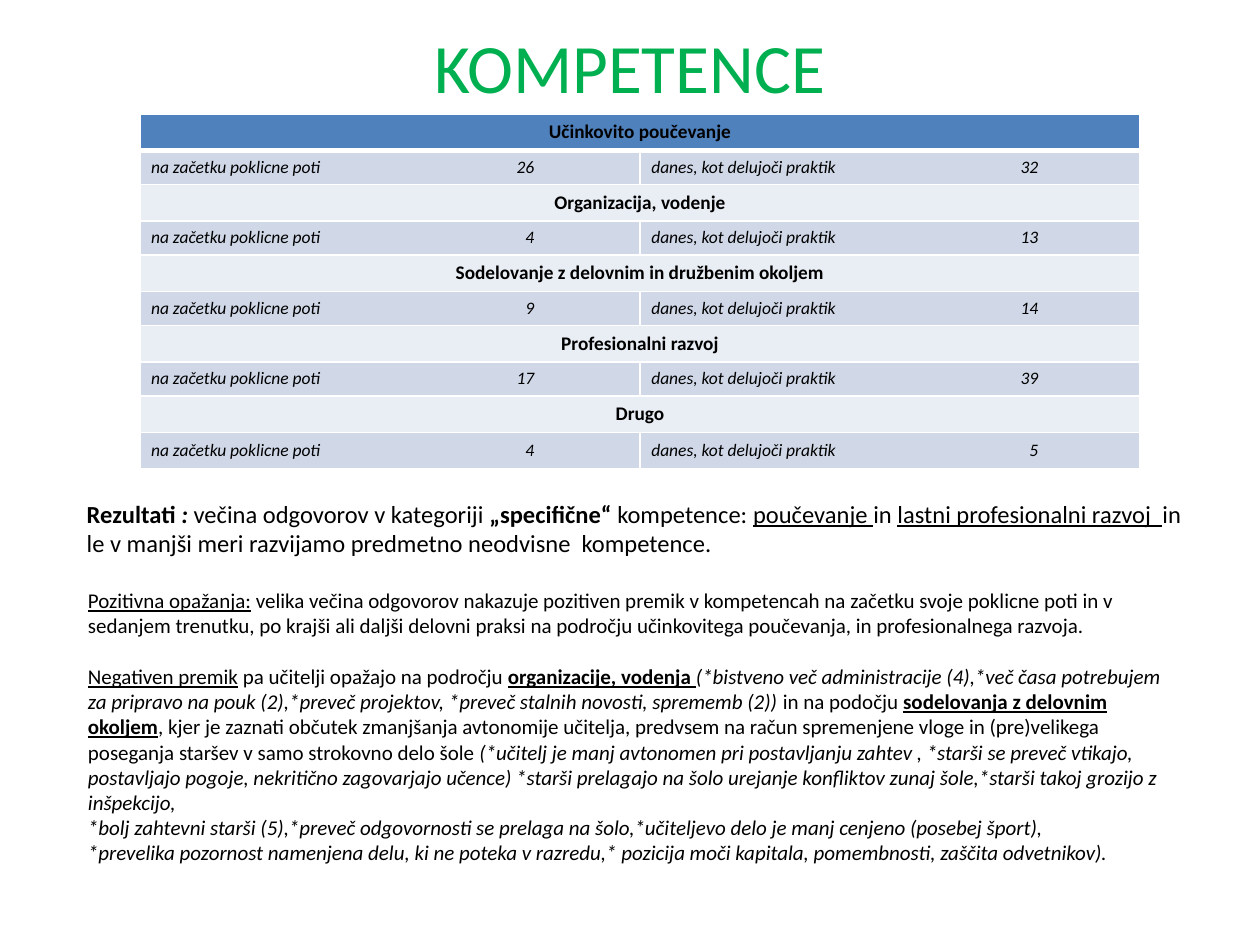
import pptx
import pptx.dml.color
import pptx.enum.text
import pptx.oxml.ns
import pptx.util
from lxml import etree

COLORS = {
    "title": "00B050", "text": "000000", "border": "FFFFFF",
    "header": "4F81BD", "heading": "E9EDF4", "values": "D0D8E8",
}
ALIGN = pptx.enum.text.PP_ALIGN
ANCHOR = pptx.enum.text.MSO_ANCHOR
qn = pptx.oxml.ns.qn

COMPETENCES = [
    ("Učinkovito poučevanje", 26, 32),
    ("Organizacija, vodenje", 4, 13),
    ("Sodelovanje z delovnim in družbenim okoljem", 9, 14),
    ("Profesionalni razvoj", 17, 39),
    ("Drugo", 4, 5),
]
PERIODS = ("na začetku poklicne poti", "danes, kot delujoči praktik")

FINDINGS = [
    (14, 0, [
        ("Rezultati", "b"), (" : ", "bi"), ("večina odgovorov v kategoriji ", ""),
        ("„specifične“ ", "b"), ("kompetence: ", ""), ("poučevanje ", "u"),
        ("in ", ""), ("lastni profesionalni razvoj  ", "u"),
        ("in le v manjši meri razvijamo predmetno neodvisne  kompetence.", ""),
    ]),
    (12, 17, [
        ("Pozitivna opažanja:", "u"),
        (" velika večina odgovorov nakazuje pozitiven premik v kompetencah na začetku "
         "svoje poklicne poti in v sedanjem trenutku, po krajši ali daljši delovni praksi "
         "na področju učinkovitega poučevanja, in profesionalnega razvoja.", ""),
    ]),
    (12, 14.6, [
        ("Negativen premik", "u"), (" pa učitelji opažajo na področju ", ""),
        ("organizacije, vodenja ", "bu"),
        ("(*bistveno več administracije (4),*več časa potrebujem za pripravo na pouk (2),"
         "*preveč projektov, *preveč stalnih novosti, sprememb (2)) ", "i"),
        ("in na podočju ", ""), ("sodelovanja z delovnim okoljem", "bu"),
        (", kjer je zaznati občutek zmanjšanja avtonomije učitelja, predvsem na račun "
         "spremenjene vloge in (pre)velikega poseganja staršev v samo strokovno delo šole ", ""),
        ("(*učitelj je manj avtonomen pri postavljanju zahtev , *starši se preveč vtikajo, "
         "postavljajo pogoje, nekritično zagovarjajo učence) *starši prelagajo na šolo "
         "urejanje konfliktov zunaj šole,*starši takoj grozijo z inšpekcijo,", "i"),
    ]),
    (12, 0, [("*bolj zahtevni starši (5),*preveč odgovornosti se prelaga na šolo,"
              "*učiteljevo delo je manj cenjeno (posebej šport),", "i")]),
    (12, 0, [("*prevelika pozornost namenjena delu, ki ne poteka v razredu,* pozicija moči "
              "kapitala, pomembnosti, zaščita odvetnikov).", "i")]),
]


def rgb(name):
    return pptx.dml.color.RGBColor.from_string(COLORS[name])


def write(paragraph, text, size, marks="", color="text", font="Calibri"):
    run = paragraph.add_run()
    run.text = text
    run.font.name = font
    run.font.size = pptx.util.Pt(size)
    run.font.color.rgb = rgb(color)
    run.font.bold = "b" in marks
    run.font.italic = "i" in marks
    run.font.underline = "u" in marks


class SlideBuilder:
    tabs = (3.04, 3.07)
    cell_margin = 0.09
    row_margin = 0.04
    heading_height = 0.29
    values_height = 0.27
    detail_size = 12
    detail_indent = 0.01

    def __init__(self, presentation):
        self.width = presentation.slide_width
        self.height = presentation.slide_height
        self.slide = presentation.slides.add_slide(presentation.slide_layouts[6])

    def area(self, left, top, width, height):
        return (int(left * self.width / 100), int(top * self.height / 100),
                int(width * self.width / 100), int(height * self.height / 100))

    def text_box(self, percent, anchor):
        frame = self.slide.shapes.add_textbox(*self.area(*percent)).text_frame
        frame.word_wrap = True
        frame.vertical_anchor = anchor
        return frame

    def title(self, text, percent):
        paragraph = self.text_box(percent, ANCHOR.MIDDLE).paragraphs[0]
        paragraph.alignment = ALIGN.CENTER
        write(paragraph, text, 39.6, color="title")

    def findings(self, findings, percent):
        frame = self.text_box(percent, ANCHOR.TOP)
        for index, (size, gap, runs) in enumerate(findings):
            paragraph = frame.add_paragraph() if index else frame.paragraphs[0]
            paragraph.space_before = pptx.util.Pt(gap)
            if size == self.detail_size:
                indent = pptx.util.Inches(self.detail_indent)
                paragraph._p.get_or_add_pPr().set("marL", str(indent))
            for text, marks in runs:
                write(paragraph, text, size, marks)

    def style_cell(self, cell, fill, top=1, bottom=1):
        properties = cell._tc.get_or_add_tcPr()
        for side, width in (("L", 1), ("R", 1), ("T", top), ("B", bottom)):
            line = etree.SubElement(properties, qn(f"a:ln{side}"), w=str(pptx.util.Pt(width)))
            solid = etree.SubElement(line, qn("a:solidFill"))
            etree.SubElement(solid, qn("a:srgbClr"), val=COLORS["border"])
        cell.fill.solid()
        cell.fill.fore_color.rgb = rgb(fill)
        cell.margin_left = cell.margin_right = pptx.util.Inches(self.cell_margin)
        cell.margin_top = cell.margin_bottom = pptx.util.Inches(self.row_margin)
        cell.vertical_anchor = ANCHOR.MIDDLE

    def heading_row(self, table, row, text):
        first = row == 0
        for column in range(2):
            self.style_cell(table.cell(row, column), "header" if first else "heading",
                            bottom=3 if first else 1)
        table.cell(row, 0).merge(table.cell(row, 1))
        paragraph = table.cell(row, 0).text_frame.paragraphs[0]
        paragraph.alignment = ALIGN.CENTER
        write(paragraph, text, 11, "b")

    def values_row(self, table, row, values):
        for column, (period, value, tab) in enumerate(zip(PERIODS, values, self.tabs)):
            cell = table.cell(row, column)
            self.style_cell(cell, "values", top=3 if row == 1 else 1)
            paragraph = cell.text_frame.paragraphs[0]
            tabs = etree.SubElement(paragraph._p.get_or_add_pPr(), qn("a:tabLst"))
            etree.SubElement(tabs, qn("a:tab"), pos=str(pptx.util.Inches(tab)), algn="r")
            write(paragraph, f"{period}\t{value}", 10, "i")

    def competence_table(self, competences, percent):
        shape = self.slide.shapes.add_table(2 * len(competences), 2, *self.area(*percent))
        table = shape.table
        for index, (name, *values) in enumerate(competences):
            row = 2 * index
            table.rows[row].height = pptx.util.Inches(self.heading_height)
            table.rows[row + 1].height = pptx.util.Inches(self.values_height)
            self.heading_row(table, row, name)
            self.values_row(table, row + 1, values)
        table.rows[len(table.rows) - 1].height = pptx.util.Inches(self.heading_height)


def main():
    presentation = pptx.Presentation()
    presentation.slide_width = pptx.util.Inches(10)
    presentation.slide_height = pptx.util.Inches(7.5)
    builder = SlideBuilder(presentation)
    builder.title("KOMPETENCE", (5, 2.9, 90, 8.2))
    builder.competence_table(COMPETENCES, (11.1, 12.05, 79.4, 37.6))
    builder.findings(FINDINGS, (5.9, 52.15, 89, 52.5))
    presentation.save("out.pptx")


if __name__ == "__main__":
    main()
